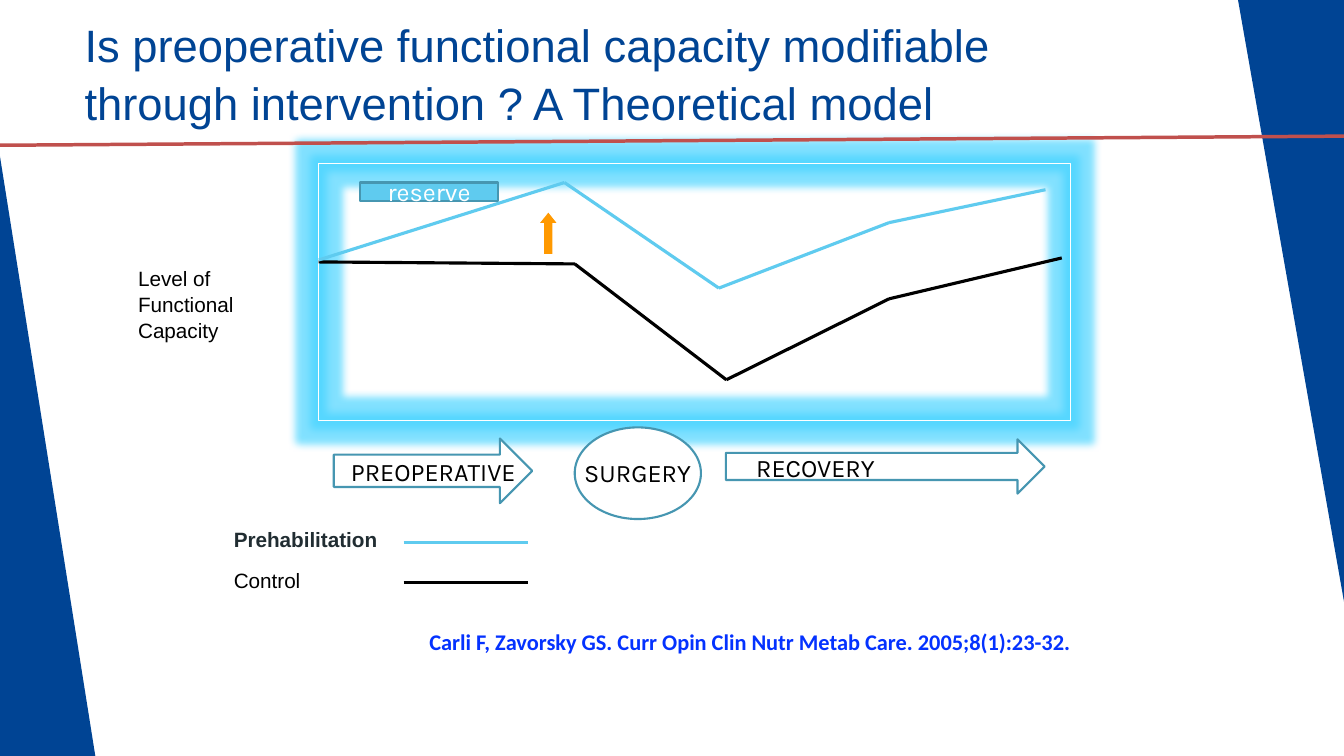
"""Build the slide on preoperative functional capacity as a theoretical model."""
from dataclasses import dataclass
from itertools import pairwise
from typing import Optional

from lxml import etree
from pptx import Presentation
from pptx.dml.color import RGBColor
from pptx.enum.shapes import MSO_CONNECTOR, MSO_SHAPE
from pptx.enum.text import MSO_ANCHOR, PP_ALIGN
from pptx.oxml.ns import qn
from pptx.util import Cm, Pt

TRIANGLE = MSO_SHAPE.RIGHT_TRIANGLE
RECTANGLE = MSO_SHAPE.RECTANGLE
UP_ARROW = MSO_SHAPE.UP_ARROW
RIGHT_ARROW = MSO_SHAPE.RIGHT_ARROW
CIRCLE = MSO_SHAPE.FLOWCHART_CONNECTOR
STRAIGHT = MSO_CONNECTOR.STRAIGHT
LEFT, CENTER, RIGHT = PP_ALIGN.LEFT, PP_ALIGN.CENTER, PP_ALIGN.RIGHT
TOP, MIDDLE = MSO_ANCHOR.TOP, MSO_ANCHOR.MIDDLE

NAVY, SKY, TEAL = "004494", "5FCBEF", "4696B1"
BLACK, WHITE, SLATE = "000000", "FFFFFF", "212D32"
ORANGE, RED, BLUE, GLOW = "FF9900", "C0504D", "0432FF", "3FD2FF"
SLIDE_WIDTH, SLIDE_HEIGHT = 33.86, 19.05

Box = tuple[float, float, float, float]
Point = tuple[float, float]


@dataclass
class Figure:
    kind: int
    box: Box
    fill: Optional[str] = None
    line: Optional[str] = None
    weight: float = 1.5
    rotation: float = 0


@dataclass
class Label:
    text: str
    box: Box
    size: float
    font: str = "Karla"
    color: str = BLACK
    bold: bool = False
    align: int = LEFT
    anchor: int = TOP
    wrap: bool = True
    spacing: float = 1.0


@dataclass
class Course:
    points: list[Point]
    color: str
    weight: float = 2.25


CORNERS = [
    Figure(TRIANGLE, (0, 3.94, 2.41, 15.16), NAVY),
    Figure(TRIANGLE, (31.19, 0, 2.67, 15.16), NAVY, rotation=180),
]
CHART_FRAME = Figure(RECTANGLE, (8.03, 4.11, 18.95, 6.48), line=WHITE, weight=0.75)
COURSES = [
    Course([(8.03, 6.6), (14.48, 6.65), (18.3, 9.57), (22.4, 7.53), (26.75, 6.5)], BLACK),
    Course([(8.03, 6.55), (14.22, 4.6), (18.11, 7.26), (22.4, 5.61), (26.34, 4.78)], SKY),
    Course([(10.17, 13.67), (13.31, 13.67)], SKY),
    Course([(10.17, 14.68), (13.31, 14.68)], BLACK),
    Course([(0, 3.66), (SLIDE_WIDTH, 3.43)], RED, 2.5),
]
GAIN_ARROW = Figure(UP_ARROW, (13.61, 5.36, 0.41, 1.04), ORANGE)
PHASES = [
    Figure(RIGHT_ARROW, (8.41, 11.05, 5, 1.63), WHITE, TEAL),
    Figure(RIGHT_ARROW, (18.29, 11.07, 8.03, 1.37), WHITE, TEAL),
    Figure(CIRCLE, (14.48, 10.77, 3.18, 2.31), WHITE, TEAL),
]
RESERVE = Figure(RECTANGLE, (9.07, 4.6, 3.48, 0.46), SKY, TEAL)
CITATION = Figure(RECTANGLE, (6.76, 15.7, 20.47, 0.94), WHITE)
LABELS = [
    Label("Is preoperative functional capacity modifiable through intervention ? "
          "A Theoretical model", (1.88, 0.25, 23.88, 3.66), 32.4, "Arial", NAVY, spacing=1.05),
    Label("Level of\nFunctional\nCapacity", (3.23, 6.55, 2.95, 2.16), 14.8, "Arial",
          wrap=False, spacing=1.05),
    Label("Prehabilitation", (5.64, 13.13, 4.17, 0.89), 14.8, "Arial", SLATE, True,
          wrap=False, spacing=1.05),
    Label("Control", (5.64, 14.15, 2.21, 0.89), 14.8, "Arial", wrap=False, spacing=1.05),
    Label("PREOPERATIVE", (8.59, 11.38, 5.36, 1.02), 18),
    Label("RECOVERY", (18.8, 11.28, 5.33, 1.02), 18),
    Label("SURGERY", (14.45, 11.4, 3.23, 1.02), 18, align=CENTER),
]
RESERVE_LABEL = Label("reserve", RESERVE.box, 18, color=WHITE, align=CENTER, anchor=MIDDLE)
CITATION_LABEL = Label("Carli F, Zavorsky GS. Curr Opin Clin Nutr Metab Care. 2005;8(1):23-32.",
                       CITATION.box, 16, "Calibri", BLUE, True, RIGHT)


def rgb(color: str) -> RGBColor:
    return RGBColor.from_string(color)


def draw_figure(slide, figure: Figure):
    shape = slide.shapes.add_shape(figure.kind, *map(Cm, figure.box))
    shape.shadow.inherit = False
    shape.rotation = figure.rotation
    if figure.fill:
        shape.fill.solid()
        shape.fill.fore_color.rgb = rgb(figure.fill)
    else:
        shape.fill.background()
    if figure.line:
        shape.line.color.rgb = rgb(figure.line)
        shape.line.width = Pt(figure.weight)
    else:
        shape.line.fill.background()
    return shape


def add_glow(shape, color: str, radius: float, opacity: int) -> None:
    effects = shape.element.spPr.find(qn("a:effectLst"))
    glow = etree.SubElement(effects, qn("a:glow"), rad=str(Pt(radius)))
    tint = etree.SubElement(glow, qn("a:srgbClr"), val=color)
    etree.SubElement(tint, qn("a:alpha"), val=str(opacity * 1000))


def write_label(shape, label: Label) -> None:
    frame = shape.text_frame
    frame.text = label.text
    frame.word_wrap = label.wrap
    frame.vertical_anchor = label.anchor
    for paragraph in frame.paragraphs:
        paragraph.alignment = label.align
        paragraph.line_spacing = label.spacing
        for run in paragraph.runs:
            run.font.name = label.font
            run.font.size = Pt(label.size)
            run.font.bold = label.bold
            run.font.color.rgb = rgb(label.color)


def draw_course(slide, course: Course) -> None:
    for start, end in pairwise(course.points):
        segment = slide.shapes.add_connector(STRAIGHT, *map(Cm, start + end))
        segment.line.color.rgb = rgb(course.color)
        segment.line.width = Pt(course.weight)
        etree.SubElement(segment.element.spPr, qn("a:effectLst"))


def main() -> None:
    presentation = Presentation()
    presentation.slide_width = Cm(SLIDE_WIDTH)
    presentation.slide_height = Cm(SLIDE_HEIGHT)
    slide = presentation.slides.add_slide(presentation.slide_layouts[6])

    for corner in CORNERS:
        draw_figure(slide, corner)
    add_glow(draw_figure(slide, CHART_FRAME), GLOW, 11, 65)
    for course in COURSES:
        draw_course(slide, course)
    gain_arrow = draw_figure(slide, GAIN_ARROW)
    gain_arrow.adjustments[0] = 0.5
    gain_arrow.adjustments[1] = 0.625
    for phase in PHASES:
        draw_figure(slide, phase)
    write_label(draw_figure(slide, CITATION), CITATION_LABEL)
    write_label(draw_figure(slide, RESERVE), RESERVE_LABEL)
    for label in LABELS:
        write_label(slide.shapes.add_textbox(*map(Cm, label.box)), label)

    presentation.save("out.pptx")


if __name__ == "__main__":
    main()
